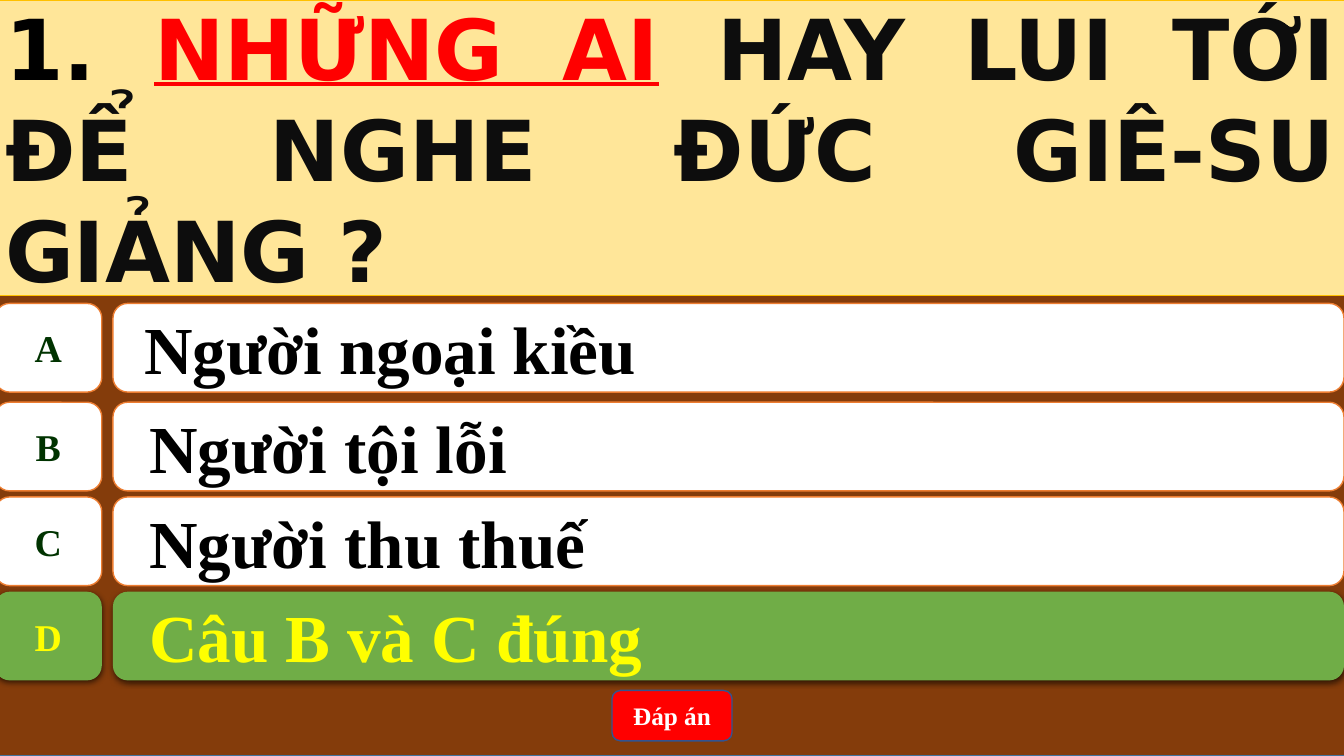
from lxml import etree
from pptx import Presentation
from pptx.dml.color import RGBColor
from pptx.enum.shapes import MSO_SHAPE as Shape
from pptx.enum.text import MSO_ANCHOR as Anchor, MSO_AUTO_SIZE as AutoSize, PP_ALIGN as Align
from pptx.oxml.ns import qn
from pptx.util import Inches, Pt

BROWN = RGBColor(0x84, 0x3C, 0x0B)
STEEL = RGBColor(0x43, 0x73, 0x9E)
NAVY = RGBColor(0x32, 0x54, 0x91)
CREAM = RGBColor(0xFF, 0xE6, 0x99)
GOLD = RGBColor(0xFF, 0xC0, 0x00)
ORANGE = RGBColor(0xED, 0x7D, 0x31)
GREEN = RGBColor(0x70, 0xAD, 0x47)
DARK_GREEN = RGBColor(0x00, 0x33, 0x00)
RED = RGBColor(0xFF, 0x00, 0x00)
YELLOW = RGBColor(0xFF, 0xFF, 0x00)
WHITE = RGBColor(0xFF, 0xFF, 0xFF)
BLACK = RGBColor(0x00, 0x00, 0x00)
INK = RGBColor(0x0D, 0x0D, 0x0D)

LEFT, FULL_WIDTH = -0.05, 13.39
ROW_HEIGHT = 0.88


class QuizSlide:
    question_font = "DejaVu Sans"
    answer_font = "Times New Roman"

    def __init__(self, deck):
        self.slide = deck.slides.add_slide(deck.slide_layouts[5])
        self.shapes = self.slide.shapes

    def paint(self, box, fill, line=None, weight=1):
        box.fill.solid()
        box.fill.fore_color.rgb = fill
        if line is None:
            box.line.fill.background()
        else:
            box.line.color.rgb = line
            box.line.width = Pt(weight)

    def panel(self, kind, place, fill, line=None):
        box = self.shapes.add_shape(kind, *map(Inches, place))
        box.shadow.inherit = False
        self.paint(box, fill, line)
        return box

    def drop_shadow(self, box):
        effects = box._element.spPr.find(qn("a:effectLst"))
        shadow = etree.SubElement(effects, qn("a:outerShdw"), blurRad=str(Pt(4.5)),
                                  dist=str(Pt(1.5)), dir="5400000", rotWithShape="0")
        color = etree.SubElement(shadow, qn("a:srgbClr"), val="000000")
        etree.SubElement(color, qn("a:alpha"), val="63000")

    def span(self, para, text, size, color, font, underline=None):
        span = para.add_run()
        span.text = text
        span.font.name = font
        span.font.size = Pt(size)
        span.font.bold = True
        span.font.underline = underline
        span.font.color.rgb = color

    def label(self, box, text, size, color, align=Align.CENTER, wrap=True):
        frame = box.text_frame
        frame.word_wrap = wrap
        frame.vertical_anchor = Anchor.MIDDLE
        para = frame.paragraphs[0]
        para.alignment = align
        self.span(para, text, size, color, self.answer_font)
        return para

    def backdrop(self):
        box = self.panel(Shape.RECTANGLE, (LEFT, 0, FULL_WIDTH, 7.5), BROWN, STEEL)
        self.shapes._spTree.insert(2, box._element)  # behind the title

    def question(self, parts):
        title = self.shapes.title
        title.left, title.top = Inches(LEFT), Inches(0)
        title.width, title.height = Inches(FULL_WIDTH), Inches(2.93)
        self.paint(title, CREAM, GOLD, 0.5)
        frame = title.text_frame
        frame.auto_size = AutoSize.NONE
        frame.word_wrap = True
        frame.vertical_anchor = Anchor.MIDDLE
        para = frame.paragraphs[0]
        para.alignment = Align.JUSTIFY
        for text, color, underline in parts:
            self.span(para, text, 60, color, self.question_font, underline)

    def answer(self, letter, text, top, indent, correct=False):
        fill, line = (GREEN, None) if correct else (WHITE, ORANGE)
        key = self.panel(Shape.FLOWCHART_ALTERNATE_PROCESS,
                         (LEFT, top, 1.06, ROW_HEIGHT), fill, line)
        self.label(key, letter, 27, YELLOW if correct else DARK_GREEN, wrap=False)
        bar = self.panel(Shape.ROUNDED_RECTANGLE,
                         (1.12, top, 12.21, ROW_HEIGHT), fill, line)
        para = self.label(bar, text, 48, YELLOW if correct else BLACK, Align.LEFT)
        para._p.get_or_add_pPr().set("marL", str(Inches(indent)))
        if correct:
            self.drop_shadow(key)
            self.drop_shadow(bar)

    def button(self, text):
        box = self.panel(Shape.ROUNDED_RECTANGLE, (6.07, 6.85, 1.19, 0.5), RED, NAVY)
        self.label(box, text, 18, WHITE)


def main():
    deck = Presentation()
    deck.slide_width, deck.slide_height = Inches(13.33), Inches(7.5)
    quiz = QuizSlide(deck)

    # Background and question
    quiz.backdrop()
    quiz.question([
        ("1. ", BLACK, False),
        ("NHỮNG AI", RED, True),
        (" HAY LUI TỚI ĐỂ NGHE ĐỨC GIÊ-SU GIẢNG ?", INK, False),
    ])

    # Answers, the last one marked as correct
    quiz.answer("A", "Người ngoại kiều", 3.01, 0.17)
    quiz.answer("B", "Người tội lỗi", 3.99, 0.22)
    quiz.answer("C", "Người thu thuế", 4.93, 0.22)
    quiz.answer("D", "Câu B và C đúng", 5.87, 0.22, correct=True)

    # Answer button
    quiz.button("Đáp án")

    deck.save("out.pptx")


if __name__ == "__main__":
    main()
